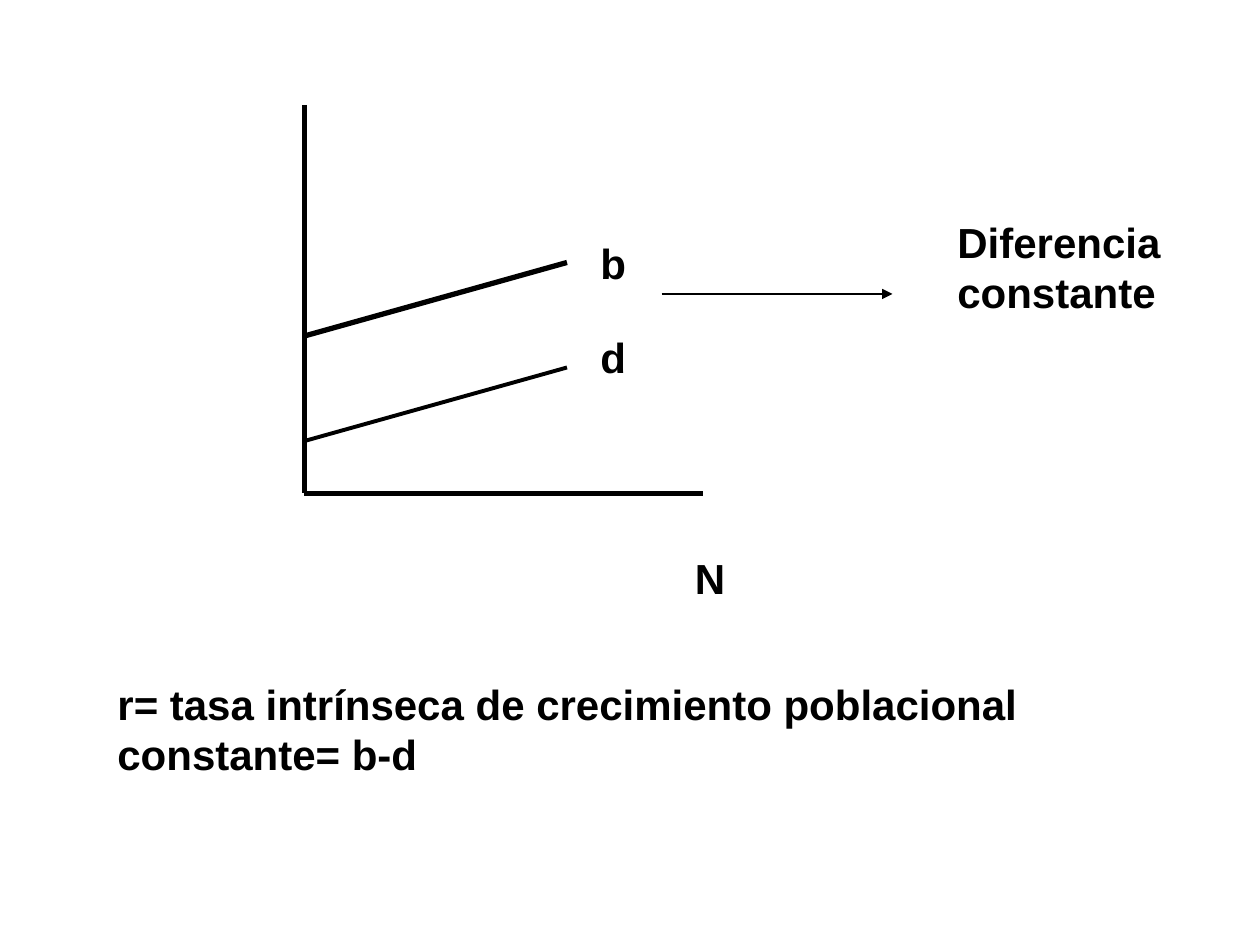
from typing import NamedTuple

from lxml import etree
from pptx import Presentation
from pptx.dml.color import RGBColor
from pptx.enum.shapes import MSO_CONNECTOR
from pptx.enum.text import MSO_AUTO_SIZE
from pptx.oxml.ns import qn
from pptx.slide import Slide
from pptx.util import Pt

STRAIGHT = MSO_CONNECTOR.STRAIGHT
GROW = MSO_AUTO_SIZE.SHAPE_TO_FIT_TEXT
BLACK = "000000"
FONT = "Arial"


class Line(NamedTuple):
    x1: float
    y1: float
    x2: float
    y2: float
    weight: float = 3
    arrow: bool = False


class Label(NamedTuple):
    text: str
    x: float
    y: float
    w: float = 42
    h: float = 36


ORIGIN_X, ORIGIN_Y = 174, 282
CURVE_END = 324

LINES = [
    Line(ORIGIN_X, 60, ORIGIN_X, ORIGIN_Y),
    Line(ORIGIN_X, ORIGIN_Y, 402, ORIGIN_Y),
    Line(ORIGIN_X, 192, CURVE_END, 150),
    Line(ORIGIN_X, 252, CURVE_END, 210, 2.25),
    Line(378, 168, 510, 168, 0.75, True),
]

LABELS = [
    Label("N", 390, 312),
    Label("b", 336, 132),
    Label("d", 336, 186),
    Label("Diferencia constante", 540, 120, 150, 65),
    Label("r= tasa intrínseca de crecimiento poblacional constante= b-d",
          60, 384, 660, 65),
]


def color(value: str) -> RGBColor:
    return RGBColor.from_string(value)


def draw_line(s: Slide, line: Line) -> None:
    c = s.shapes.add_connector(
        STRAIGHT, Pt(line.x1), Pt(line.y1), Pt(line.x2), Pt(line.y2))
    c.line.color.rgb = color(BLACK)
    c.line.width = Pt(line.weight)
    if line.arrow:
        etree.SubElement(c.line._get_or_add_ln(), qn("a:tailEnd"), type="triangle")
    etree.SubElement(c._element.spPr, qn("a:effectLst"))


def draw_label(s: Slide, label: Label) -> None:
    sp = s.shapes.add_textbox(
        Pt(label.x), Pt(label.y), Pt(label.w), Pt(label.h))
    tf = sp.text_frame
    tf.word_wrap = True
    tf.auto_size = GROW
    p = tf.paragraphs[0]
    p.text = label.text
    p.font.name = FONT
    p.font.size = Pt(24)
    p.font.bold = True
    p.font.color.rgb = color(BLACK)


def main() -> None:
    prs = Presentation()
    prs.slide_width, prs.slide_height = Pt(720), Pt(540)
    s = prs.slides.add_slide(prs.slide_layouts[6])
    for line in LINES:
        draw_line(s, line)
    for label in LABELS:
        draw_label(s, label)
    prs.save("out.pptx")


if __name__ == "__main__":
    main()
